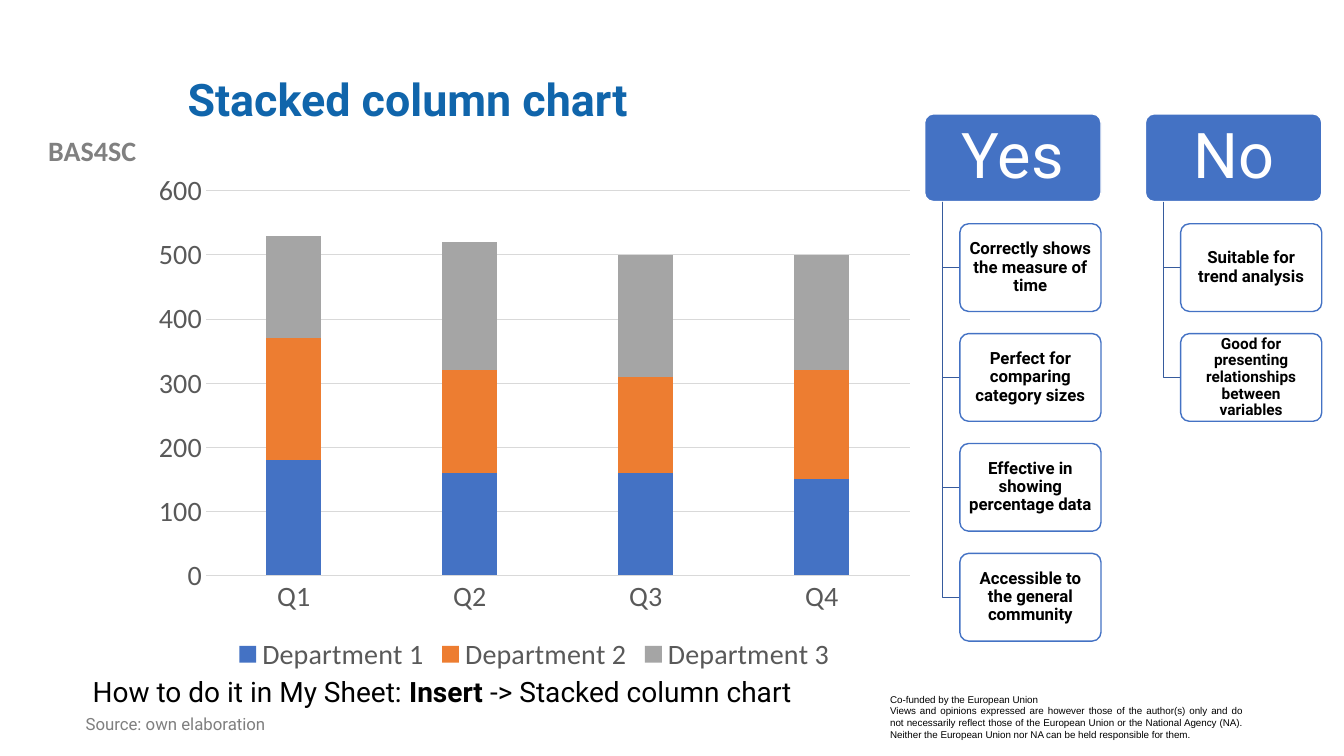
from lxml import etree
from pptx import Presentation
from pptx.chart.data import CategoryChartData
from pptx.dml.color import RGBColor
from pptx.enum.chart import XL_CHART_TYPE, XL_LEGEND_POSITION, XL_TICK_MARK
from pptx.enum.shapes import MSO_SHAPE
from pptx.enum.text import MSO_ANCHOR, MSO_AUTO_SIZE, PP_ALIGN
from pptx.oxml.ns import qn
from pptx.util import Inches, Pt

STACKED = XL_CHART_TYPE.COLUMN_STACKED
BOTTOM = XL_LEGEND_POSITION.BOTTOM
NO_TICK = XL_TICK_MARK.NONE
ROUNDED = MSO_SHAPE.ROUNDED_RECTANGLE
FIXED_SIZE = MSO_AUTO_SIZE.NONE
MIDDLE, TOP = MSO_ANCHOR.MIDDLE, MSO_ANCHOR.TOP
LEFT, CENTER, JUSTIFY = PP_ALIGN.LEFT, PP_ALIGN.CENTER, PP_ALIGN.JUSTIFY

WHITE = RGBColor(0xFF, 0xFF, 0xFF)
BLACK = RGBColor(0x00, 0x00, 0x00)
TITLE_BLUE = RGBColor(0x10, 0x65, 0xAB)
BLUE = RGBColor(0x44, 0x72, 0xC4)
ORANGE = RGBColor(0xED, 0x7D, 0x31)
GRAY = RGBColor(0xA5, 0xA5, 0xA5)
STEM_BLUE = RGBColor(0x36, 0x5B, 0x9D)
LABEL_GRAY = RGBColor(0x80, 0x80, 0x80)
SOURCE_GRAY = RGBColor(0x7F, 0x7F, 0x7F)
AXIS_GRAY = RGBColor(0x59, 0x59, 0x59)
GRID_GRAY = RGBColor(0xD9, 0xD9, 0xD9)

QUARTERS = ["Q1", "Q2", "Q3", "Q4"]
DEPARTMENTS = [
    ("Department 1", [180, 160, 160, 150], BLUE),
    ("Department 2", [190, 160, 150, 170], ORANGE),
    ("Department 3", [160, 200, 190, 180], GRAY),
]
VERDICTS = [
    ("Yes", [
        ("Correctly shows the measure of time", 12),
        ("Perfect for comparing category sizes", 12),
        ("Effective in showing percentage data", 12),
        ("Accessible to the general community", 12),
    ]),
    ("No", [
        ("Suitable for trend analysis", 12),
        ("Good for presenting relationships between variables", 11),
    ]),
]
DISCLAIMER = [
    "Co-funded by the European Union",
    "Views and opinions expressed are however those of the author(s) only and do "
    "not necessarily reflect those of the European Union or the National Agency "
    "(NA). Neither the European Union nor NA can be held responsible for them.",
]


class ChartPage:
    font_name = "Roboto"

    def __init__(self, deck):
        self.page = deck.slides.add_slide(deck.slide_layouts[5])
        self.shapes = self.page.shapes

    def style_font(self, font, size, color, bold=False, name=None):
        font.name = name or self.font_name
        font.size = Pt(size)
        font.bold = bold
        font.color.rgb = color

    def set_text(self, shape, paragraphs, size, color, bold=False, name=None,
                 align=LEFT, anchor=TOP, spacing=1.0):
        """Fill a shape with paragraphs, each a list of (text, bold) spans or a string."""
        frame = shape.text_frame
        frame.word_wrap = True
        frame.auto_size = FIXED_SIZE
        frame.vertical_anchor = anchor
        for index, content in enumerate(paragraphs):
            para = frame.add_paragraph() if index else frame.paragraphs[0]
            para.alignment = align
            para.line_spacing = spacing
            spans = [(content, bold)] if isinstance(content, str) else content
            for text, span_bold in spans:
                span = para.add_run()
                span.text = text
                self.style_font(span.font, size, color, span_bold, name)

    def title(self, text, place):
        box = self.shapes.title
        box.left, box.top, box.width, box.height = map(Inches, place)
        self.set_text(box, [text], 32, TITLE_BLUE, True, anchor=MIDDLE, spacing=0.9)

    def text(self, paragraphs, place, size, color, **style):
        box = self.shapes.add_textbox(*map(Inches, place))
        self.set_text(box, paragraphs, size, color, **style)
        return box

    def card(self, text, place, size, fill, line, color, bold, inset):
        box = self.shapes.add_shape(ROUNDED, *map(Inches, place))
        box.adjustments[0] = 0.1
        box.shadow.inherit = False
        box.fill.solid()
        box.fill.fore_color.rgb = fill
        box.line.color.rgb = line
        box.line.width = Pt(1)
        frame = box.text_frame
        frame.margin_left = frame.margin_right = Inches(inset)
        frame.margin_top = frame.margin_bottom = Inches(0.05)
        self.set_text(box, [text], size, color, bold, align=CENTER, anchor=MIDDLE, spacing=0.9)
        return box

    def elbow(self, left, top, right, bottom):
        builder = self.shapes.build_freeform(Inches(left), Inches(top))
        corners = [(left, bottom), (right, bottom)]
        builder.add_line_segments([(Inches(x), Inches(y)) for x, y in corners], close=False)
        stem = builder.convert_to_shape()
        stem.shadow.inherit = False
        stem.fill.background()
        stem.line.color.rgb = STEM_BLUE
        stem.line.width = Pt(1)

    def verdict(self, heading, reasons, left):
        """Draw a heading with its reasons hanging below it on elbow lines."""
        top, height, step = 1.13, 0.87, 1.09
        self.card(heading, (left, top, 1.75, height), 45, BLUE, WHITE, WHITE, False, 0.12)
        for row, (reason, size) in enumerate(reasons):
            card_left, card_top = left + 0.35, top + step * (row + 1)
            self.elbow(left + 0.18, top + height, card_left, card_top + height / 2)
            box = self.card(reason, (card_left, card_top, 1.4, height), size,
                            WHITE, BLUE, BLACK, True, 0.05)
            fill_color = box.element.spPr.find(qn("a:solidFill"))[0]
            etree.SubElement(fill_color, qn("a:alpha")).set("val", "90000")

    def stacked_columns(self, categories, series_rows, place):
        data = CategoryChartData()
        data.categories = categories
        for name, values, _ in series_rows:
            data.add_series(name, values)
        chart = self.shapes.add_chart(STACKED, *map(Inches, place), data).chart
        self.style_font(chart.font, 20, BLACK, name="Calibri")
        chart.has_title = False
        chart.has_legend = True
        chart.legend.position = BOTTOM
        chart.legend.include_in_layout = False

        plot = chart.plots[0]
        plot.gap_width, plot.overlap = 219, 100
        plot.vary_by_categories = False
        for series, (_, _, color) in zip(plot.series, series_rows):
            series.format.fill.solid()
            series.format.fill.fore_color.rgb = color

        category_axis, value_axis = chart.category_axis, chart.value_axis
        for axis in (category_axis, value_axis):
            axis.major_tick_mark = axis.minor_tick_mark = NO_TICK
        for font in (category_axis.tick_labels.font, value_axis.tick_labels.font,
                     chart.legend.font):
            self.style_font(font, 20, AXIS_GRAY, name="Calibri")
        value_axis.minimum_scale, value_axis.maximum_scale = 0, 600
        value_axis.major_unit = 100
        value_axis.format.line.fill.background()
        value_axis.has_major_gridlines = True
        for line in (category_axis.format.line, value_axis.major_gridlines.format.line):
            line.color.rgb = GRID_GRAY
            line.width = Pt(0.75)


def main():
    deck = Presentation()
    deck.slide_width, deck.slide_height = Inches(13.33), Inches(7.5)
    page = ChartPage(deck)
    page.text(["BAS4SC"], (0, 1.28, 1.83, 0.44), 20, LABEL_GRAY,
              bold=True, name="Calibri", align=CENTER)
    disclaimer = page.text(DISCLAIMER, (8.73, 6.83, 3.69, 0.57), 7, BLACK,
                           name="Arial", align=JUSTIFY)
    disclaimer.fill.solid()
    disclaimer.fill.fore_color.rgb = WHITE
    page.title("Stacked column chart", (1.76, 0.4, 10.66, 1.22))
    page.text(["Source: own elaboration"], (0.75, 7.05, 5.01, 0.37), 12,
              SOURCE_GRAY, spacing=0.9)
    page.stacked_columns(QUARTERS, DEPARTMENTS, (1.42, 1.62, 7.76, 5.1))
    for column, (heading, reasons) in enumerate(VERDICTS):
        page.verdict(heading, reasons, 9.17 + 2.19 * column)
    how_to = [("How to do it in My Sheet: ", False), ("Insert ", True),
              ("-> Stacked column chart", False)]
    page.text([how_to], (0.82, 6.64, 7.88, 0.44), 20, BLACK)
    deck.save("out.pptx")


if __name__ == "__main__":
    main()
